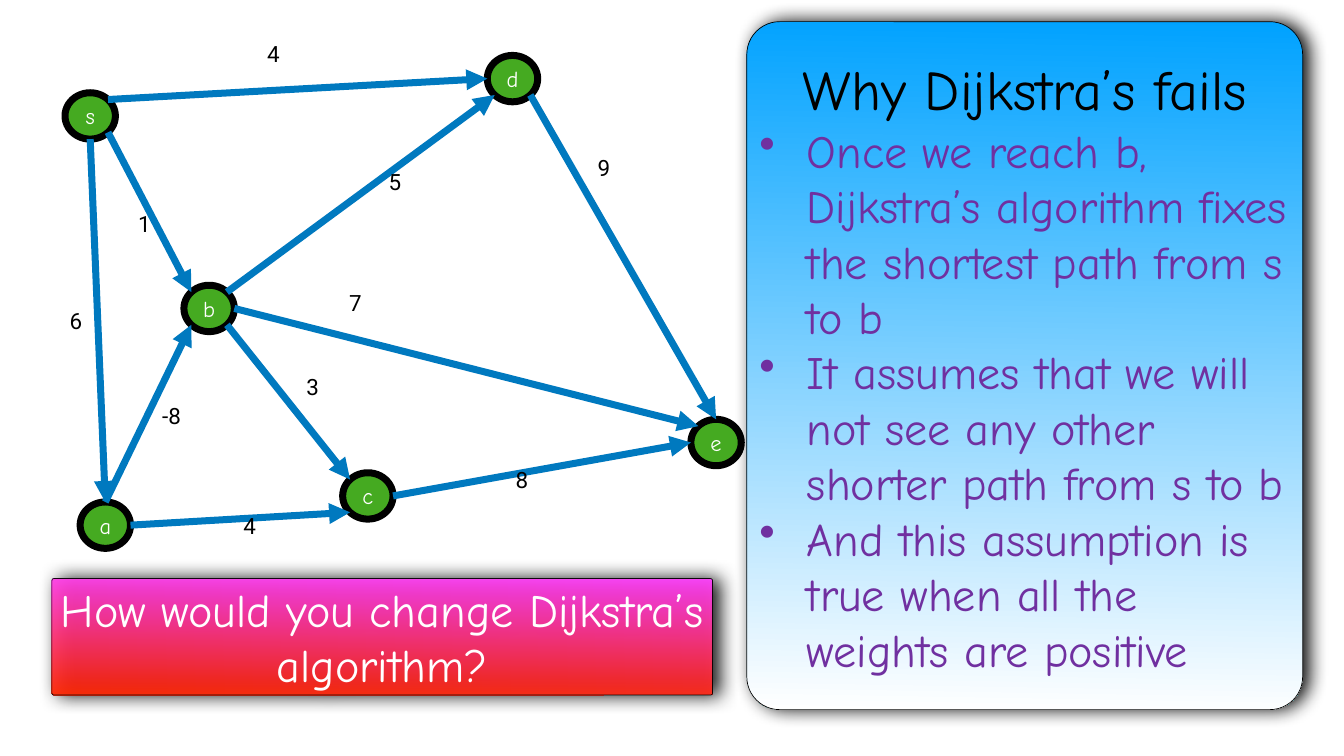
"""Build a slide with a weighted graph and why Dijkstra's algorithm fails on it."""
from lxml import etree
from pptx import Presentation
from pptx.dml.color import RGBColor
from pptx.enum.shapes import MSO_CONNECTOR, MSO_SHAPE
from pptx.enum.text import MSO_ANCHOR, PP_ALIGN
from pptx.oxml.ns import qn
from pptx.util import Inches, Pt

OVAL, ROUNDED = MSO_SHAPE.OVAL, MSO_SHAPE.ROUNDED_RECTANGLE
STRAIGHT = MSO_CONNECTOR.STRAIGHT
MIDDLE, LEFT, CENTER = MSO_ANCHOR.MIDDLE, PP_ALIGN.LEFT, PP_ALIGN.CENTER
HAND_FONT, LABEL_FONT = "Comic Neue", "Roboto"
BLACK, WHITE, GREEN, BLUE, PURPLE = "000000", "FFFFFF", "45AA21", "0079BF", "7030A0"

NODE_WIDTH, NODE_HEIGHT = 1, 0.92
LABEL_WIDTH, LABEL_HEIGHT = 0.54, 1.23
DIAGONAL = 0.707
INDENT = 0.94

NODES = {
    "s": (1.29, 1.84), "d": (9.67, 1.1), "b": (3.65, 5.66),
    "a": (1.59, 9.96), "c": (6.8, 9.38), "e": (13.71, 8.32),
}
SIDES = {
    "N": (0, -1), "E": (1, 0), "S": (0, 1), "W": (-1, 0),
    "NE": (DIAGONAL, -DIAGONAL), "SE": (DIAGONAL, DIAGONAL),
    "SW": (-DIAGONAL, DIAGONAL), "NW": (-DIAGONAL, -DIAGONAL),
}
EDGES = [
    ("d", "SE", "e", "N", "9", (11.8, 2.75)),
    ("b", "NE", "d", "SW", "5", (7.65, 3.02)),
    ("a", "N", "b", "SW", "-8", (3.16, 7.67)),
    ("b", "SE", "c", "NW", "3", (6.02, 7.09)),
    ("c", "E", "e", "W", "8", (10.17, 8.94)),
    ("s", "SE", "b", "NW", "1", (2.68, 3.85)),
    ("s", "NE", "d", "W", "4", (5.24, 0.49)),
    ("s", "S", "a", "N", "6", (1.32, 5.78)),
    ("a", "E", "c", "SW", "4", (4.77, 9.84)),
    ("b", "E", "e", "NW", "7", (6.87, 5.42)),
]
TITLE = "Why Dijkstra’s fails"
REASONS = [
    "Once we reach b, Dijkstra’s algorithm fixes the shortest path from s to b",
    "It assumes that we will not see any other shorter path from s to b",
    "And this assumption is true when all the weights are positive",
]
QUESTION = "How would you change Dijkstra’s algorithm?"


def rgb(color):
    return RGBColor.from_string(color)


def set_up_frame(shape):
    frame = shape.text_frame
    frame.word_wrap = True
    frame.vertical_anchor = MIDDLE
    frame.margin_left = frame.margin_right = Inches(0.06)
    frame.margin_top = frame.margin_bottom = Inches(0.06)
    return frame


def write(paragraph, text, size, color, font=HAND_FONT, align=CENTER):
    paragraph.alignment = align
    run = paragraph.add_run()
    run.text = text
    run.font.size = Pt(size)
    run.font.name = font
    run.font.color.rgb = rgb(color)


def add_bullet(paragraph):
    properties = paragraph._p.get_or_add_pPr()
    properties.set("marL", str(Inches(INDENT)))
    properties.set("indent", str(-Inches(INDENT)))
    etree.SubElement(properties, qn("a:buChar"), char="•")


def add_node(slide, name, left, top):
    shape = slide.shapes.add_shape(
        OVAL, Inches(left), Inches(top), Inches(NODE_WIDTH), Inches(NODE_HEIGHT))
    shape.shadow.inherit = False
    shape.fill.solid()
    shape.fill.fore_color.rgb = rgb(GREEN)
    shape.line.color.rgb = rgb(BLACK)
    shape.line.width = Pt(10)
    write(set_up_frame(shape).paragraphs[0], name, 32, WHITE)


def node_point(name, side):
    left, top = NODES[name]
    across, down = SIDES[side]
    return (Inches(left + NODE_WIDTH / 2 * (1 + across)),
            Inches(top + NODE_HEIGHT / 2 * (1 + down)))


def add_edge(slide, start, end):
    connector = slide.shapes.add_connector(STRAIGHT, *start, *end)
    connector.line.color.rgb = rgb(BLUE)
    connector.line.width = Pt(10)
    etree.SubElement(connector.line._get_or_add_ln(), qn("a:tailEnd"), type="triangle")
    etree.SubElement(connector._element.spPr, qn("a:effectLst"))


def add_weight(slide, weight, left, top):
    box = slide.shapes.add_textbox(
        Inches(left), Inches(top), Inches(LABEL_WIDTH), Inches(LABEL_HEIGHT))
    paragraph = set_up_frame(box).paragraphs[0]
    paragraph.line_spacing = 0.9
    write(paragraph, weight, 32, BLACK, LABEL_FONT, LEFT)


def add_panel(slide, bounds, corner, colors, opacity):
    shape = slide.shapes.add_shape(ROUNDED, *map(Inches, bounds))
    shape.adjustments[0] = corner
    shape.fill.gradient()
    shape.fill.gradient_angle = 269
    for stop, position, color in zip(shape.fill.gradient_stops, (0, 1), colors):
        stop.position = position
        stop.color.rgb = rgb(color)
    shape.line.color.rgb = rgb(BLACK)
    shape.line.width = Pt(1)
    properties = shape._element.spPr
    for color in properties.iter(qn("a:srgbClr")):
        etree.SubElement(color, qn("a:alpha"), val=str(opacity * 1000))
    shape.shadow.inherit = False
    shadow = etree.SubElement(
        properties.find(qn("a:effectLst")), qn("a:outerShdw"),
        blurRad=str(Pt(28)), dist=str(Pt(9)), dir="0", rotWithShape="0")
    shadow_color = etree.SubElement(shadow, qn("a:srgbClr"), val=BLACK)
    etree.SubElement(shadow_color, qn("a:alpha"), val="97000")
    return set_up_frame(shape)


def main():
    presentation = Presentation()
    presentation.slide_width, presentation.slide_height = Inches(26.67), Inches(15)
    slide = presentation.slides.add_slide(presentation.slide_layouts[6])

    for name, (left, top) in NODES.items():
        add_node(slide, name, left, top)
    for source, source_side, target, target_side, _, _ in EDGES:
        add_edge(slide, node_point(source, source_side), node_point(target, target_side))
    for *_, weight, (left, top) in EDGES:
        add_weight(slide, weight, left, top)

    frame = add_panel(slide, (14.82, 0.43, 11.03, 13.65), 0.059, ("00A2FF", WHITE), 100)
    write(frame.paragraphs[0], TITLE, 80, BLACK)
    for reason in REASONS:
        paragraph = frame.add_paragraph()
        add_bullet(paragraph)
        write(paragraph, reason, 66, PURPLE, align=LEFT)

    frame = add_panel(slide, (1.03, 11.48, 13.11, 2.31), 0.017, ("FF40FF", "FF2600"), 93)
    write(frame.paragraphs[0], QUESTION, 66, WHITE)
    presentation.save("out.pptx")


if __name__ == "__main__":
    main()
